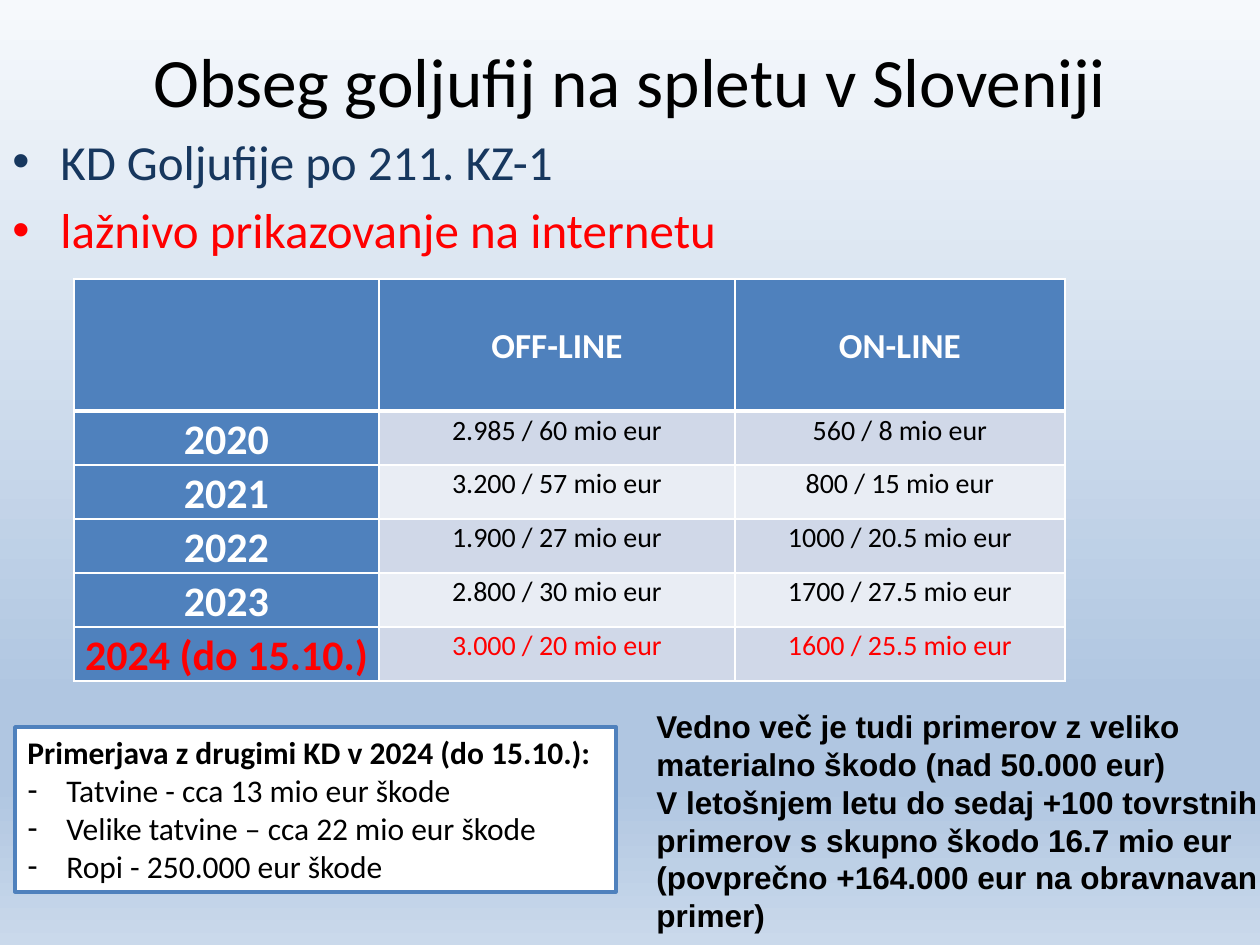
from copy import deepcopy

from lxml import etree
from pptx import Presentation
from pptx import util as u
from pptx.dml.color import RGBColor
from pptx.enum import shapes, text
from pptx.oxml import ns

BLACK = RGBColor(0x00, 0x00, 0x00)
WHITE = RGBColor(0xFF, 0xFF, 0xFF)
RED = RGBColor(0xFF, 0x00, 0x00)
NAVY = RGBColor(0x17, 0x37, 0x5E)
BLUE = RGBColor(0x4F, 0x81, 0xBD)
BANDS = [RGBColor(0xD0, 0xD8, 0xE8), RGBColor(0xE9, 0xED, 0xF4)]
BACKGROUND = [
    (0, RGBColor(0xF6, 0xF9, 0xFC)),
    (0.74, RGBColor(0xB0, 0xC6, 0xE1)),
    (0.83, RGBColor(0xB0, 0xC6, 0xE1)),
    (1, RGBColor(0xCA, 0xD9, 0xEB)),
]

TITLE = "Obseg goljufij na spletu v Sloveniji"
TOPICS = [
    ("KD Goljufije po 211. KZ-1", NAVY),
    ("lažnivo prikazovanje na internetu", RED),
]
FRAUDS = [
    ("", "OFF-LINE", "ON-LINE"),
    ("2020", "2.985 / 60 mio eur", "560 / 8 mio eur"),
    ("2021", "3.200 / 57 mio eur", "800 / 15 mio eur"),
    ("2022", "1.900 / 27 mio eur", "1000 / 20.5 mio eur"),
    ("2023", "2.800 / 30 mio eur", "1700 / 27.5 mio eur"),
    ("2024 (do 15.10.)", "3.000 / 20 mio eur", "1600 / 25.5 mio eur"),
]
COMPARISON = "Primerjava z drugimi KD v 2024 (do 15.10.):"
OTHER_CRIMES = [
    "Tatvine - cca 13 mio eur škode",
    "Velike tatvine – cca 22 mio eur škode",
    "Ropi - 250.000 eur škode",
]
LARGE_LOSSES = [
    "Vedno več je tudi primerov z veliko materialno škodo (nad 50.000 eur)",
    "V letošnjem letu do sedaj +100 tovrstnih primerov s skupno škodo 16.7 mio eur "
    "(povprečno +164.000 eur na obravnavan primer)",
]

TITLE_BOX = (63, 38, 1134, 158)
TOPICS_BOX = (0, 125, 746, 624)
TABLE_BOX = (74, 279, 991, 402)
COMPARISON_BOX = (15, 727, 601, 165)
LOSSES_BOX = (644, 701, 630, 242)
COLUMN_WIDTHS = [305, 356, 330]
HEADER_HEIGHT, YEAR_HEIGHT = 132, 54


def px(length):
    return u.Emu(round(length * 914400 / 126))


def place(box):
    return [px(length) for length in box]


def assign(target, values):
    for key, value in values.items():
        setattr(target, key, value)


def write(paragraph, words, size, color, bold=False, font="Calibri", **layout):
    run = paragraph.add_run()
    run.text = words
    assign(run.font, {"name": font, "size": u.Pt(size), "bold": bold})
    run.font.color.rgb = color
    assign(paragraph, layout)


def next_paragraph(frame):
    first = frame.paragraphs[0]
    return frame.add_paragraph() if first.runs else first


def add_bullet(paragraph, mark, indent):
    properties = paragraph._p.get_or_add_pPr()
    properties.set("marL", str(px(indent)))
    properties.set("indent", str(-px(indent)))
    etree.SubElement(properties, ns.qn("a:buFont"), typeface="Arial")
    etree.SubElement(properties, ns.qn("a:buChar"), char=mark)


def add_borders(cell, bottom):
    properties = cell._tc.get_or_add_tcPr()
    for side, width in {"lnL": 1, "lnR": 1, "lnT": 1, "lnB": bottom}.items():
        line = etree.SubElement(properties, ns.qn("a:" + side), w=str(u.Pt(width)))
        fill = etree.SubElement(line, ns.qn("a:solidFill"))
        etree.SubElement(fill, ns.qn("a:srgbClr"), val=str(WHITE))


def paint_background(slide):
    fill = slide.background.fill
    fill.gradient()
    fill.gradient_angle = 270
    stops = slide.element.find(".//" + ns.qn("a:gsLst"))
    while len(stops) < len(BACKGROUND):
        stops.append(deepcopy(stops[0]))
    for stop, (position, color) in zip(fill.gradient_stops, BACKGROUND):
        stop.position = position
        stop.color.rgb = color


def add_title(slide):
    title = slide.shapes.title
    assign(title, dict(zip(("left", "top", "width", "height"), place(TITLE_BOX))))
    assign(title.text_frame, {"margin_top": 0, "vertical_anchor": text.MSO_ANCHOR.TOP})
    write(title.text_frame.paragraphs[0], TITLE, 39.6, BLACK,
          alignment=text.PP_ALIGN.CENTER)


def add_topics(slide):
    frame = slide.shapes.add_textbox(*place(TOPICS_BOX)).text_frame
    frame.word_wrap = True
    for topic, color in TOPICS:
        paragraph = next_paragraph(frame)
        write(paragraph, topic, 28, color, space_before=u.Pt(5.6))
        add_bullet(paragraph, "•", 48)


def add_frauds(slide):
    table = slide.shapes.add_table(len(FRAUDS), len(COLUMN_WIDTHS), *place(TABLE_BOX)).table
    for column, width in zip(table.columns, COLUMN_WIDTHS):
        column.width = px(width)
    for r, values in enumerate(FRAUDS):
        header, latest = r == 0, r == len(FRAUDS) - 1
        table.rows[r].height = px(HEADER_HEIGHT if header else YEAR_HEIGHT)
        for c, value in enumerate(values):
            cell = table.cell(r, c)
            label = header or c == 0
            add_borders(cell, 3 if header else 1)
            cell.fill.solid()
            cell.fill.fore_color.rgb = BLUE if label else BANDS[(r - 1) % 2]
            assign(cell, {
                "margin_left": px(9), "margin_right": px(9),
                "margin_top": 0, "margin_bottom": 0,
                "vertical_anchor": text.MSO_ANCHOR.MIDDLE if header else text.MSO_ANCHOR.TOP,
            })
            if value:
                size = 20 if header else 24 if label else 16
                color = RED if latest else WHITE if label else BLACK
                write(cell.text_frame.paragraphs[0], value, size, color, label,
                      alignment=text.PP_ALIGN.CENTER, line_spacing=1.07)


def add_comparison(slide):
    panel = slide.shapes.add_shape(shapes.MSO_SHAPE.RECTANGLE, *place(COMPARISON_BOX))
    panel.shadow.inherit = False
    panel.fill.solid()
    panel.fill.fore_color.rgb = WHITE
    panel.line.color.rgb = BLUE
    panel.line.width = u.Pt(2)
    frame = panel.text_frame
    assign(frame, {"word_wrap": True, "vertical_anchor": text.MSO_ANCHOR.TOP})
    write(frame.paragraphs[0], COMPARISON, 18, BLACK, True, alignment=text.PP_ALIGN.LEFT)
    for crime in OTHER_CRIMES:
        paragraph = next_paragraph(frame)
        write(paragraph, crime, 18, BLACK, alignment=text.PP_ALIGN.LEFT)
        add_bullet(paragraph, "-", 39)


def add_losses(slide):
    frame = slide.shapes.add_textbox(*place(LOSSES_BOX)).text_frame
    frame.word_wrap = True
    for finding in LARGE_LOSSES:
        write(next_paragraph(frame), finding, 18, BLACK, True, "Arial")


def main():
    deck = Presentation()
    assign(deck, {"slide_width": px(1260), "slide_height": px(945)})
    slide = deck.slides.add_slide(deck.slide_layouts[5])
    for build in (paint_background, add_title, add_topics, add_frauds,
                  add_comparison, add_losses):
        build(slide)
    deck.save("out.pptx")


if __name__ == "__main__":
    main()
